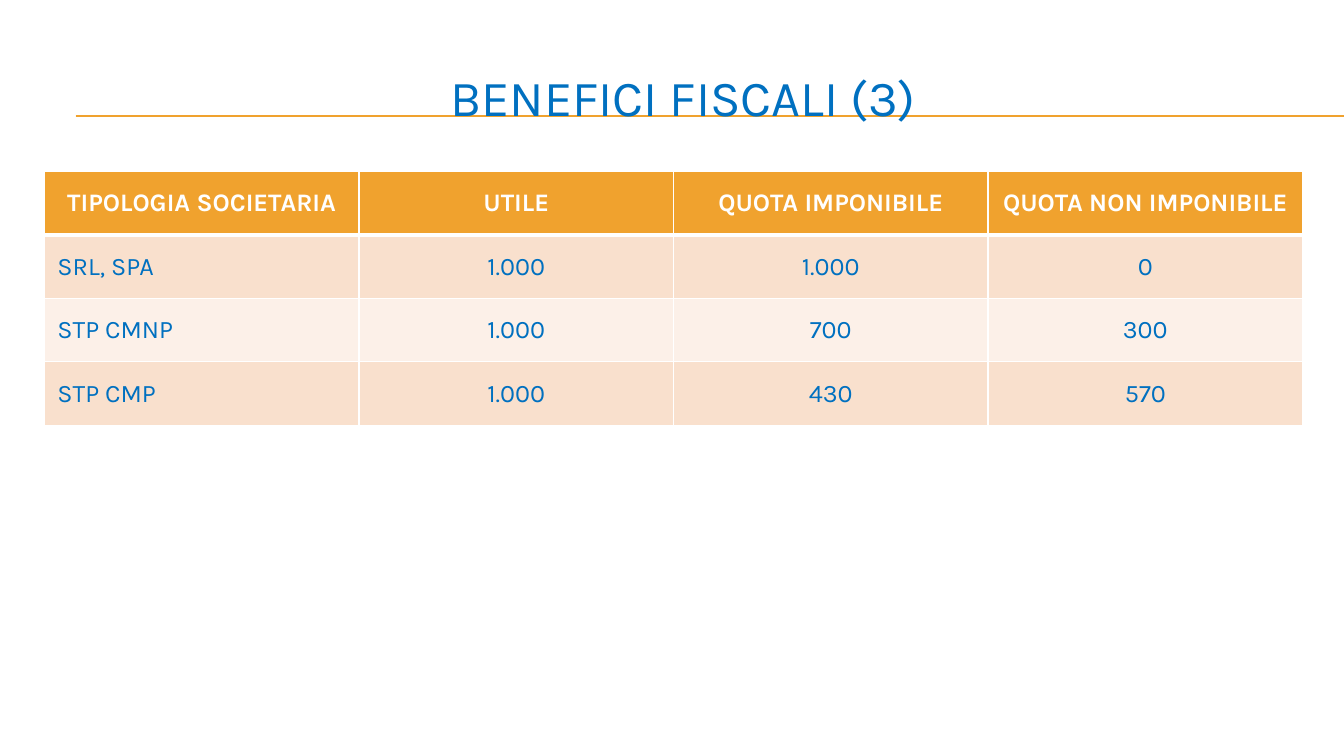
import dataclasses

import lxml.etree
import pptx
import pptx.dml.color
import pptx.enum.shapes
import pptx.enum.text
import pptx.oxml.ns
import pptx.slide
import pptx.table
import pptx.text.text
import pptx.util

Inches = pptx.util.Inches
Pt = pptx.util.Pt
ALIGN = pptx.enum.text.PP_ALIGN
MIDDLE = pptx.enum.text.MSO_ANCHOR.MIDDLE
FONT = "Karla"
COLORS = {
    "blue": "0070C0",
    "gold": "F0A22E",
    "peach": "F9E0CD",
    "cream": "FCF0E8",
    "white": "FFFFFF",
}


@dataclasses.dataclass(frozen=True)
class Row:
    texts: tuple[str, ...]
    fill: str
    ink: str = "blue"
    bold: bool = False
    first: ALIGN = ALIGN.LEFT
    top: float = 1
    base: float = 1


ROWS = [
    Row(("TIPOLOGIA SOCIETARIA", "UTILE", "QUOTA IMPONIBILE", "QUOTA NON IMPONIBILE"),
        "gold", "white", True, ALIGN.CENTER, base=3),
    Row(("SRL, SPA", "1.000", "1.000", "0"), "peach", top=3),
    Row(("STP CMNP", "1.000", "700", "300"), "cream"),
    Row(("STP CMP", "1.000", "430", "570"), "peach"),
]


def color(name: str) -> pptx.dml.color.RGBColor:
    return pptx.dml.color.RGBColor.from_string(COLORS[name])


def write(frame: pptx.text.text.TextFrame, text: str, size: float, ink: str,
          bold: bool = False, align: ALIGN = ALIGN.CENTER) -> None:
    frame.text = text
    line = frame.paragraphs[0]
    line.alignment = align
    font = line.runs[0].font
    font.name, font.size, font.bold = FONT, Pt(size), bold
    font.color.rgb = color(ink)


def add_rule(slide: pptx.slide.Slide, y: float) -> None:
    rule = slide.shapes.add_connector(
        pptx.enum.shapes.MSO_CONNECTOR.STRAIGHT,
        Inches(0.75), Inches(y), Inches(13.33), Inches(y))
    rule.line.color.rgb = color("gold")
    rule.line.width = Pt(0.75)
    lxml.etree.SubElement(rule._element.spPr, pptx.oxml.ns.qn("a:effectLst"))


def add_title(slide: pptx.slide.Slide, text: str) -> None:
    box = slide.shapes.add_textbox(Inches(0.44), Inches(0.5), Inches(12.67), Inches(0.92))
    box.text_frame.word_wrap = True
    box.text_frame.vertical_anchor = MIDDLE
    write(box.text_frame, text, 36, "blue")


def set_edge(cell: pptx.table._Cell, side: str, width: float) -> None:
    qn = pptx.oxml.ns.qn
    edge = lxml.etree.SubElement(
        cell._tc.get_or_add_tcPr(), qn(f"a:ln{side}"), w=str(Pt(width)))
    fill = lxml.etree.SubElement(edge, qn("a:solidFill"))
    lxml.etree.SubElement(fill, qn("a:srgbClr"), val=COLORS["white"])


def fill_cell(cell: pptx.table._Cell, row: Row, col: int) -> None:
    cell.margin_left = cell.margin_right = Inches(0.13)
    cell.margin_top = cell.margin_bottom = Inches(0.05)
    cell.vertical_anchor = MIDDLE
    align = ALIGN.CENTER if col else row.first
    write(cell.text_frame, row.texts[col], 18, row.ink, row.bold, align)
    for side, width in (("L", 1), ("R", 1), ("T", row.top), ("B", row.base)):
        set_edge(cell, side, width)
    cell.fill.solid()
    cell.fill.fore_color.rgb = color(row.fill)


def add_grid(slide: pptx.slide.Slide, rows: list[Row]) -> None:
    count = len(rows[0].texts)
    grid = slide.shapes.add_table(
        len(rows), count, Inches(0.44), Inches(1.7),
        Inches(3.12 * count), Inches(0.63 * len(rows))).table
    for r, row in enumerate(rows):
        for c in range(count):
            fill_cell(grid.cell(r, c), row, c)


def main() -> None:
    deck = pptx.Presentation()
    deck.slide_width, deck.slide_height = Inches(13.33), Inches(7.5)
    slide = deck.slides.add_slide(deck.slide_layouts[6])
    for y in (1.15, 1.16):
        add_rule(slide, y)
    add_title(slide, "BENEFICI FISCALI (3)")
    add_grid(slide, ROWS)
    deck.save("out.pptx")


if __name__ == "__main__":
    main()
